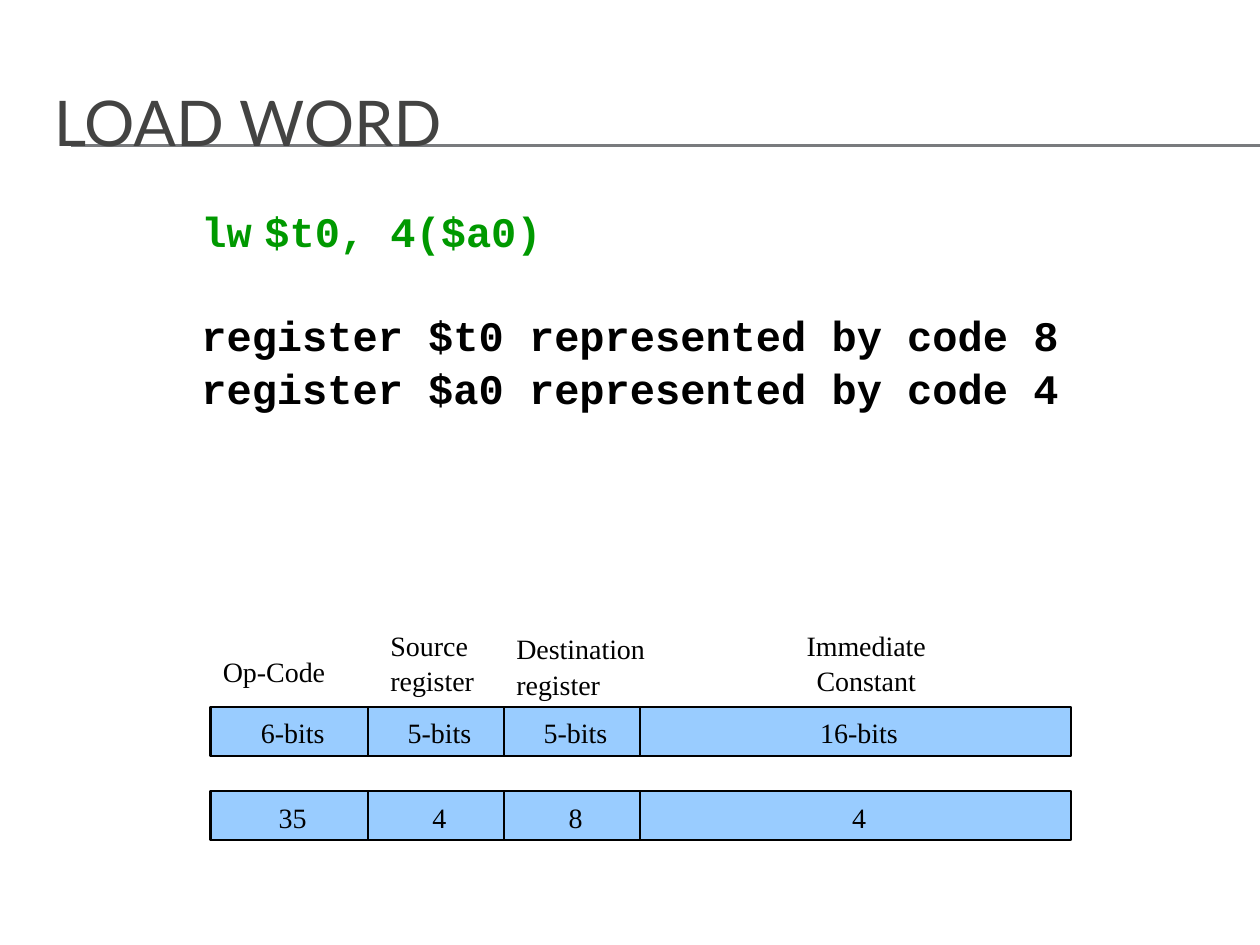
from typing import NamedTuple

from lxml.etree import SubElement as Sub
from pptx import Presentation
from pptx.dml.color import RGBColor as RGB
from pptx.enum.shapes import MSO_CONNECTOR as Link, MSO_SHAPE as Shape
from pptx.enum.text import MSO_ANCHOR as Anchor, PP_ALIGN as Align
from pptx.oxml.ns import qn
from pptx.util import Inches, Pt

HEX = {"rule": "797B7E", "title": "434342", "code": "009900",
       "ink": "000000", "cell": "99CCFF"}
HIGH = 0.39
SERIF = {"name": "Times New Roman", "size": Pt(16)}
MONO = {"name": "Courier New", "size": Pt(24), "bold": True}
LATO = {"name": "Lato", "size": Pt(36)}


class Field(NamedTuple):
    wide: float
    bits: str
    value: str


class Label(NamedTuple):
    text: str
    left: float
    top: float
    wide: float
    high: float
    align: Align = Align.LEFT


FIELDS = [
    Field(1.25, " 6-bits", " 35"),
    Field(1.08, " 5-bits", " 4"),
    Field(1.08, " 5-bits", " 8"),
    Field(3.42, " 16-bits", " 4"),
]
LABELS = [
    Label("Op-Code", 1.67, 5.13, 1.25, 0.37),
    Label("Source register", 3, 4.92, 0.92, 0.64),
    Label("Destination register", 4, 4.95, 1.33, 0.64),
    Label("Immediate Constant", 6, 4.92, 1.75, 0.64, Align.CENTER),
]


def tint(name: str) -> RGB:
    """Return a named colour."""
    return RGB.from_string(HEX[name])


def write(para, text: str, look: dict, ink: str = "ink",
          align: Align = Align.LEFT, space: float = 1.06) -> None:
    """Fill a paragraph with one styled run."""
    para.alignment = align
    para.line_spacing = space
    run = para.add_run()
    run.text = text
    for key, value in look.items():
        setattr(run.font, key, value)
    run.font.color.rgb = tint(ink)


def frame(slide, left: float, top: float, wide: float, high: float):
    """Add a wrapping text box and return its text frame."""
    box = slide.shapes.add_textbox(
        Inches(left), Inches(top), Inches(wide), Inches(high))
    box.text_frame.word_wrap = True
    return box.text_frame


def rule(slide, top: float) -> None:
    """Draw a thin line to the right edge of the slide."""
    line = slide.shapes.add_connector(
        Link.STRAIGHT, Inches(0.56), Inches(top), Inches(10), Inches(top))
    line.line.color.rgb = tint("rule")
    line.line.width = Pt(0.75)
    Sub(line.element.spPr, qn("a:effectLst"))


def cell(slide, left: float, top: float, wide: float, text: str) -> None:
    """Draw one field of an instruction word."""
    box = slide.shapes.add_shape(
        Shape.RECTANGLE, Inches(left), Inches(top), Inches(wide), Inches(HIGH))
    box.shadow.inherit = False
    box.fill.solid()
    box.fill.fore_color.rgb = tint("cell")
    box.line.color.rgb = tint("ink")
    box.line.width = Pt(1.25)
    box.text_frame.vertical_anchor = Anchor.MIDDLE
    write(box.text_frame.paragraphs[0], text, SERIF, align=Align.CENTER)


def row(slide, top: float, key: str) -> None:
    """Draw the fields of an instruction word side by side."""
    left = 1.67
    for field in FIELDS:
        cell(slide, left, top, field.wide, getattr(field, key))
        left += field.wide


def code(slide) -> None:
    """Write the instruction and its register codes."""
    text = frame(slide, 1.5, 1.56, 7.33, 2.3)
    write(text.paragraphs[0], "lw\t$t0, 4($a0)", MONO, "code")
    first = text.add_paragraph()
    first.space_before = Pt(28.8)
    write(first, "register $t0 represented by code 8", MONO)
    write(text.add_paragraph(), "register $a0 represented by code 4", MONO)


def main() -> None:
    """Build and save the slide."""
    deck = Presentation()
    deck.slide_width, deck.slide_height = Inches(10), Inches(7.5)
    slide = deck.slides.add_slide(deck.slide_layouts[6])
    for top in (1.15, 1.16):
        rule(slide, top)
    title = frame(slide, 0.33, 0.5, 9.5, 0.92)
    title.vertical_anchor = Anchor.MIDDLE
    write(title.paragraphs[0], "LOAD WORD", LATO, "title", space=1.0)
    code(slide)
    for label in LABELS:
        text = frame(slide, label.left, label.top, label.wide, label.high)
        write(text.paragraphs[0], label.text, SERIF, align=label.align)
    row(slide, 5.61, "bits")
    row(slide, 6.28, "value")
    deck.save("out.pptx")


if __name__ == "__main__":
    main()
